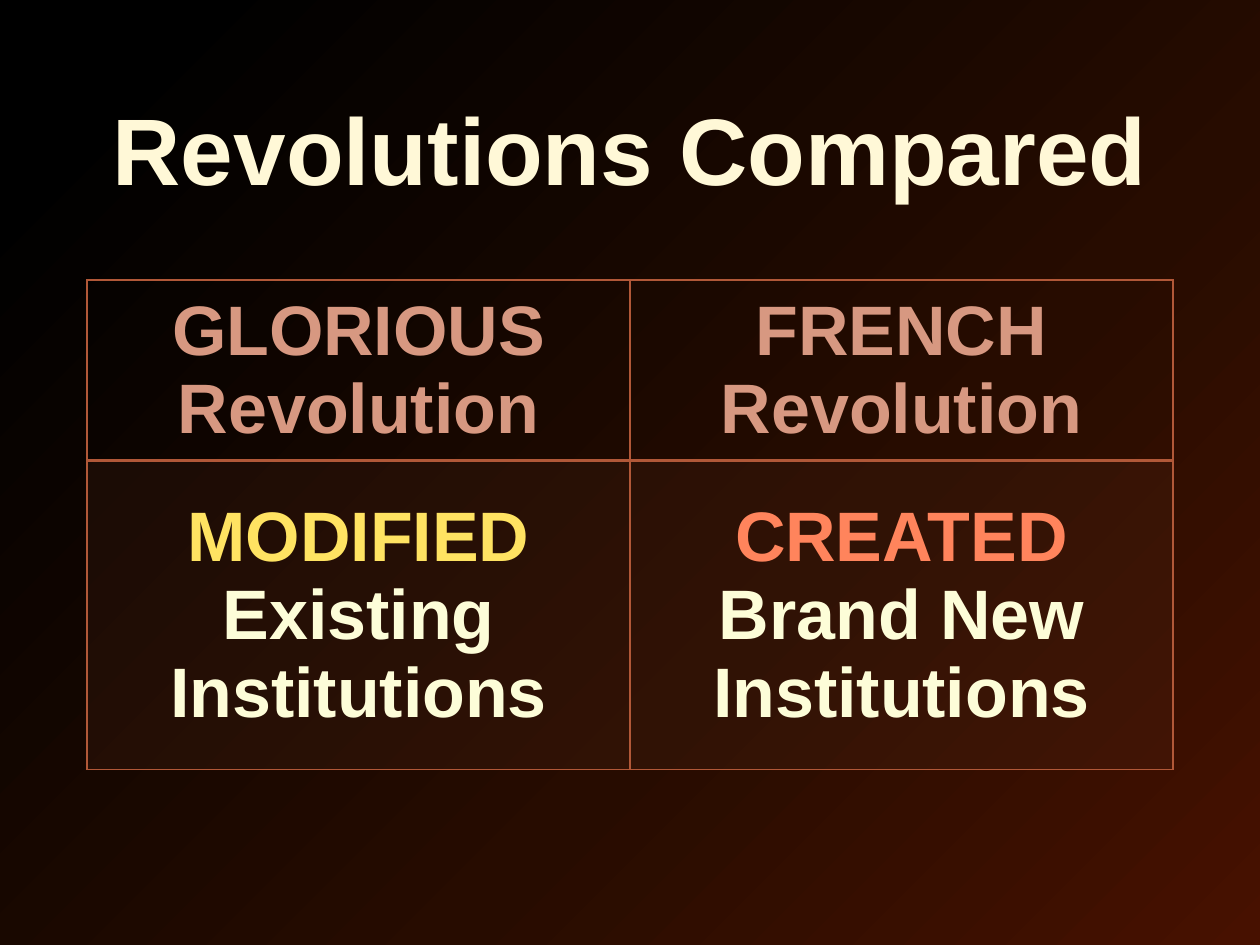
from lxml.etree import SubElement
from pptx import Presentation
from pptx.dml.color import RGBColor
from pptx.enum.text import MSO_ANCHOR, PP_ALIGN
from pptx.oxml import parse_xml
from pptx.oxml.ns import nsdecls, qn
from pptx.util import Emu, Pt

PX = 914400 // 126
COLORS = {"title": "FFF8D7", "head": "D79881", "body": "FDFDD8", "modified": "FFE362",
          "created": "FF845C", "border": "B15838", "cell": "582C1C"}
GRADIENT = [(9, "000000"), (63, "270C00"), (100, "471100")]
FONT = {"name": "Arial", "bold": True}

# Content: each cell is a list of (text, colour) runs
TITLE = [("Revolutions Compared", "title")]
ROWS = [
    [[("GLORIOUS Revolution", "head")], [("FRENCH Revolution", "head")]],
    [[("MODIFIED ", "modified"), ("Existing Institutions", "body")],
     [("CREATED", "created"), (" Brand New Institutions", "body")]],
]
TITLE_BOX = (0, 63, 1260, 183)
TABLE_LEFT, TABLE_TOP, COL_WIDTH = 87, 280, 543
ROW_HEIGHTS = [169, 309]
THIN, THICK = 1, 2


def px(n):
    return Emu(n * PX)


def write(tf, runs, size, line_spacing=None):
    p = tf.paragraphs[0]
    p.alignment = PP_ALIGN.CENTER
    p.line_spacing = line_spacing
    for text, color in runs:
        r = p.add_run()
        r.text = text
        for key, value in {**FONT, "size": Pt(size)}.items():
            setattr(r.font, key, value)
        r.font.color.rgb = RGBColor.from_string(COLORS[color])


def border(cell, widths):
    tcPr = cell._tc.get_or_add_tcPr()
    for i, (side, width) in enumerate(widths.items()):
        tcPr.insert(i, parse_xml(
            f'<a:ln{side} {nsdecls("a")} w="{Pt(width)}"><a:solidFill>'
            f'<a:srgbClr val="{COLORS["border"]}"/></a:solidFill></a:ln{side}>'))


prs = Presentation()
prs.slide_width, prs.slide_height = px(1260), px(945)
s = prs.slides.add_slide(prs.slide_layouts[6])

# Background gradient, running from top left to bottom right
fill = s.background.fill
fill.gradient()
fill.gradient_angle = 315
stops = s.background._cSld.find(".//" + qn("a:gsLst"))
for stop in list(stops):
    stops.remove(stop)
for pos, color in GRADIENT:
    gs = SubElement(stops, qn("a:gs"), pos=str(pos * 1000))
    SubElement(gs, qn("a:srgbClr"), val=color)

# Title
tf = s.shapes.add_textbox(*map(px, TITLE_BOX)).text_frame
tf.word_wrap = True
tf.vertical_anchor = MSO_ANCHOR.MIDDLE
write(tf, TITLE, 54, 0.9)

# Comparison table
table = s.shapes.add_table(len(ROWS), 2, px(TABLE_LEFT), px(TABLE_TOP),
                           px(2 * COL_WIDTH), px(sum(ROW_HEIGHTS))).table
table.first_row = table.horz_banding = False
for col in table.columns:
    col.width = px(COL_WIDTH)
for i, (row, height) in enumerate(zip(ROWS, ROW_HEIGHTS)):
    table.rows[i].height = px(height)
    for j, runs in enumerate(row):
        cell = table.cell(i, j)
        cell.vertical_anchor = MSO_ANCHOR.MIDDLE
        write(cell.text_frame, runs, 40)
        if i == 0:
            cell.fill.background()
        else:
            cell.fill.solid()
            cell.fill.fore_color.rgb = RGBColor.from_string(COLORS["cell"])
            tint = cell._tc.tcPr.find(".//" + qn("a:srgbClr"))
            SubElement(tint, qn("a:alpha"), val="20000")
        border(cell, {"L": THIN, "R": THIN, "T": THICK if i else THIN,
                      "B": THIN if i else THICK})

prs.save("out.pptx")
